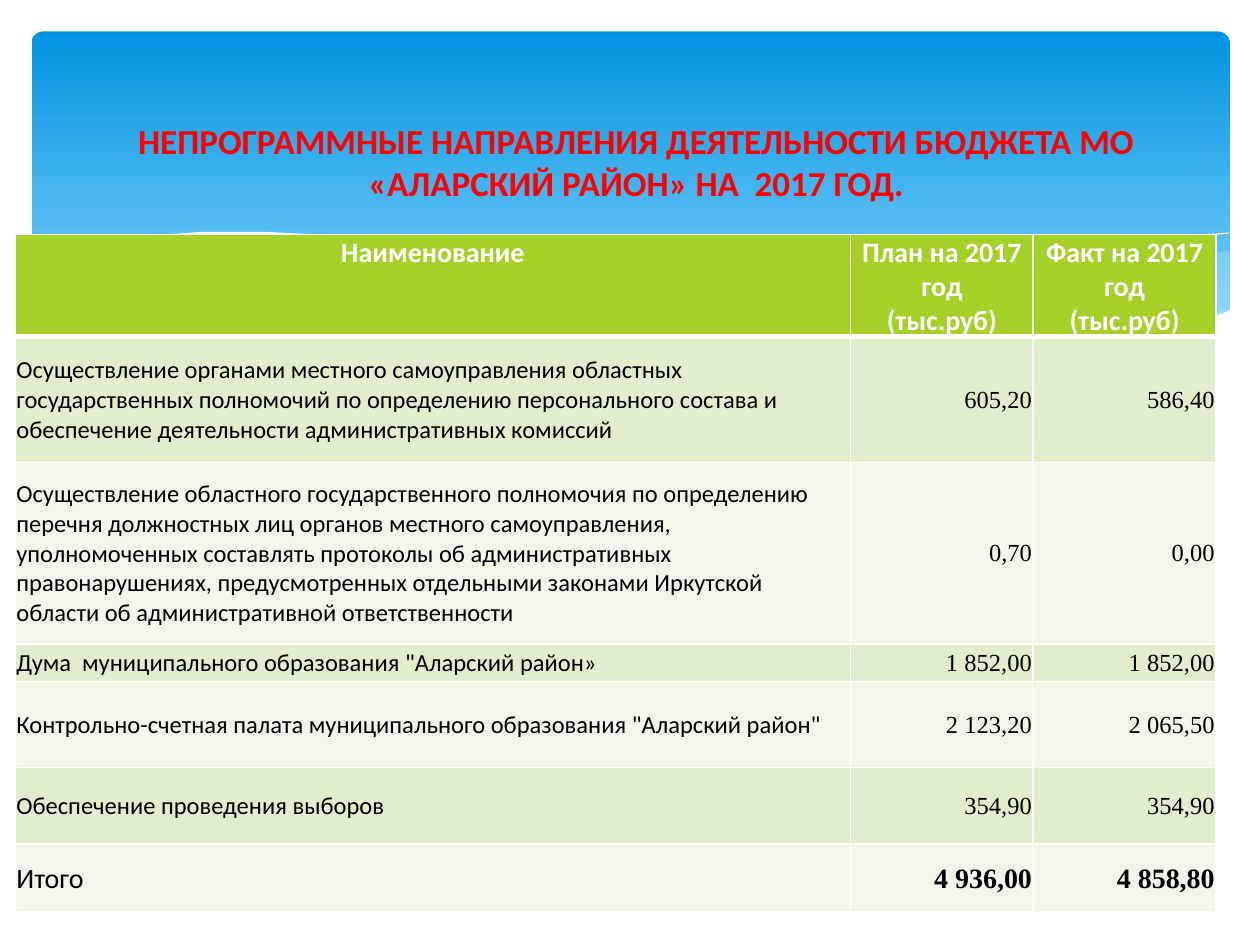
from dataclasses import dataclass
from typing import Optional

from lxml.etree import SubElement
from pptx import Presentation
from pptx.dml.color import RGBColor
from pptx.enum.shapes import MSO_SHAPE
from pptx.enum.text import MSO_ANCHOR, PP_ALIGN
from pptx.oxml.ns import qn
from pptx.util import Inches, Pt

COLORS = {
    "sky_top": "0293E0", "sky_bottom": "83D3FE", "wave": "C6E7FC",
    "white": "FFFFFF", "black": "000000", "title": "FF0000",
    "header": "A5D028", "odd_row": "E1EECD", "even_row": "F0F7E8",
}


@dataclass
class Wave:
    points: list[tuple[float, float]]
    fill: Optional[str] = None
    alpha: int = 100


@dataclass
class BudgetRow:
    name: str
    plan: str
    fact: str
    height: float
    size: int = 14
    bold: bool = False


@dataclass
class TextStyle:
    size: int
    color: str
    font: str = "Calibri"
    bold: bool = False
    align: PP_ALIGN = PP_ALIGN.LEFT


WAVES = [
    Wave([(9.76, 1.99), (9.48, 2.04), (9.21, 2.09), (8.91, 2.16), (8.61, 2.23), (8.05, 2.37),
          (7.53, 2.48), (7.06, 2.57), (6.61, 2.65), (6.91, 2.69), (7.18, 2.72), (7.45, 2.75),
          (7.69, 2.77), (8.03, 2.78), (8.44, 2.77), (8.72, 2.74), (8.97, 2.7), (9.21, 2.65),
          (9.49, 2.57), (9.76, 2.47)], "wave", 29),
    Wave([(8.93, 2.73), (8.66, 2.69), (8.07, 2.6), (7.41, 2.48), (6.68, 2.31), (5.98, 2.14),
          (5.55, 2.05), (5.14, 1.98), (4.65, 1.91), (4.2, 1.87), (3.8, 1.86), (3.44, 1.86),
          (3.13, 1.88), (2.86, 1.91), (3.23, 1.96), (3.62, 2.03), (4.04, 2.11), (4.49, 2.22),
          (5.3, 2.4), (5.84, 2.52), (6.34, 2.61), (6.8, 2.68), (7.22, 2.74), (7.61, 2.77),
          (8.07, 2.78), (8.48, 2.77), (8.76, 2.75)], "wave", 40),
    Wave([(3.09, 1.95), (3.28, 1.92), (3.53, 1.89), (3.87, 1.87), (4.33, 1.87), (4.69, 1.89),
          (5.1, 1.92), (5.56, 1.97), (6.08, 2.04), (6.65, 2.13), (7.27, 2.26), (7.95, 2.41),
          (8.31, 2.51), (9.07, 2.72)]),
    Wave([(6.13, 2.57), (6.52, 2.46), (6.95, 2.35), (7.48, 2.23), (8.06, 2.1), (8.66, 1.99),
          (8.95, 1.94), (9.24, 1.9), (9.51, 1.87), (9.75, 1.85)]),
    Wave([(9.77, 2.46), (9.5, 2.56), (9.2, 2.65), (8.87, 2.71), (8.5, 2.75), (8.09, 2.77),
          (7.61, 2.75), (7.08, 2.7), (6.47, 2.62), (5.79, 2.5), (5.03, 2.33), (4.47, 2.2),
          (3.91, 2.07), (3.39, 1.97), (2.92, 1.91), (2.5, 1.86), (2.11, 1.84), (1.61, 1.84),
          (1.32, 1.86), (1.06, 1.89), (0.85, 1.93), (0.67, 1.97), (0.52, 2.01), (0.36, 2.07),
          (0.23, 2.13), (0.23, 3.29), (9.77, 3.29)], "white"),
]

HEADER_HEIGHT = 0.81
COLUMN_WIDTHS = [6.63, 1.45, 1.45]
HEADINGS = [["Наименование"], ["План на 2017 год", "(тыс.руб)"], ["Факт на 2017 год", "(тыс.руб)"]]
BUDGET_ROWS = [
    BudgetRow("Осуществление органами местного самоуправления областных государственных полномочий "
              "по определению персонального состава и обеспечение деятельности административных "
              "комиссий", "605,20", "586,40", 1),
    BudgetRow("Осуществление областного государственного полномочия по определению перечня "
              "должностных лиц органов местного самоуправления, уполномоченных составлять протоколы "
              "об административных правонарушениях, предусмотренных отдельными законами Иркутской "
              "области об административной ответственности", "0,70", "0,00", 1.44),
    BudgetRow('Дума  муниципального образования "Аларский район»', "1 852,00", "1 852,00", 0.3),
    BudgetRow('Контрольно-счетная палата муниципального образования "Аларский район"',
              "2 123,20", "2 065,50", 0.68),
    BudgetRow("Обеспечение проведения выборов", "354,90", "354,90", 0.61),
    BudgetRow("Итого", "4 936,00", "4 858,80", 0.54, 16, True),
]


def rgb(name: str) -> RGBColor:
    return RGBColor.from_string(COLORS[name])


def write(frame, lines: list[str], style: TextStyle) -> None:
    for index, line in enumerate(lines):
        paragraph = frame.add_paragraph() if index else frame.paragraphs[0]
        paragraph.alignment = style.align
        run = paragraph.add_run()
        run.text = line
        run.font.size = Pt(style.size)
        run.font.name = style.font
        run.font.bold = style.bold
        run.font.color.rgb = rgb(style.color)


def draw_sky(slide) -> None:
    sky = slide.shapes.add_shape(MSO_SHAPE.ROUNDED_RECTANGLE, Inches(0.25), Inches(0.25),
                                 Inches(9.51), Inches(2.7))
    sky.adjustments[0] = 0.034
    sky.shadow.inherit = False
    sky.line.fill.background()
    sky.fill.gradient()
    sky.fill.gradient_angle = 270
    stops = [("sky_top", 0), ("sky_bottom", 0.9)]
    for stop, (color, position) in zip(sky.fill.gradient_stops, stops):
        stop.color.rgb = rgb(color)
        stop.position = position


def draw_wave(slide, wave: Wave) -> None:
    start, *rest = [(Inches(x), Inches(y)) for x, y in wave.points]
    builder = slide.shapes.build_freeform(*start)
    builder.add_line_segments(rest, close=wave.fill is not None)
    outline = builder.convert_to_shape()
    outline.shadow.inherit = False
    if wave.fill is None:
        outline.fill.background()
        outline.line.color.rgb = rgb("white")
        outline.line.width = Pt(0)
        return
    outline.line.fill.background()
    outline.fill.solid()
    outline.fill.fore_color.rgb = rgb(wave.fill)
    if wave.alpha < 100:
        color = outline.fill._xPr.find(qn("a:solidFill"))[0]
        SubElement(color, qn("a:alpha"), val=str(wave.alpha * 1000))


def draw_title(slide) -> None:
    title = slide.shapes.add_textbox(Inches(0.55), Inches(0.7), Inches(9), Inches(1.17)).text_frame
    title.word_wrap = True
    title.vertical_anchor = MSO_ANCHOR.MIDDLE
    write(title, ["НЕПРОГРАММНЫЕ НАПРАВЛЕНИЯ ДЕЯТЕЛЬНОСТИ БЮДЖЕТА МО «АЛАРСКИЙ РАЙОН» НА  2017 ГОД."],
          TextStyle(20, "title", bold=True, align=PP_ALIGN.CENTER))


def fill_cell(cell, lines: list[str], style: TextStyle, fill: str, top: int, bottom: int) -> None:
    cell.margin_left = cell.margin_top = cell.margin_right = Inches(0.01)
    cell.margin_bottom = 0
    cell.vertical_anchor = MSO_ANCHOR.MIDDLE
    properties = cell._tc.get_or_add_tcPr()
    for side, width in {"L": 1, "R": 1, "T": top, "B": bottom}.items():
        border = SubElement(properties, qn(f"a:ln{side}"), w=str(Pt(width)))
        SubElement(SubElement(border, qn("a:solidFill")), qn("a:srgbClr"), val=COLORS["white"])
    cell.fill.solid()
    cell.fill.fore_color.rgb = rgb(fill)
    write(cell.text_frame, lines, style)


def draw_budget(slide) -> None:
    heights = [HEADER_HEIGHT] + [row.height for row in BUDGET_ROWS]
    budget = slide.shapes.add_table(len(heights), len(COLUMN_WIDTHS), Inches(0.12), Inches(1.86),
                                    Inches(sum(COLUMN_WIDTHS)), Inches(sum(heights))).table
    for column, width in zip(budget.columns, COLUMN_WIDTHS):
        column.width = Inches(width)
    for table_row, height in zip(budget.rows, heights):
        table_row.height = Inches(height)
    heading_style = TextStyle(16, "white", bold=True, align=PP_ALIGN.CENTER)
    for column, lines in enumerate(HEADINGS):
        fill_cell(budget.cell(0, column), lines, heading_style, "header", 1, 3)
    budget.cell(0, 0).vertical_anchor = MSO_ANCHOR.TOP
    for index, row in enumerate(BUDGET_ROWS, 1):
        fill = "odd_row" if index % 2 else "even_row"
        name_style = TextStyle(row.size, "black")
        amount_style = TextStyle(row.size, "black", "Times New Roman", row.bold, PP_ALIGN.RIGHT)
        for column, text in enumerate([row.name, row.plan, row.fact]):
            fill_cell(budget.cell(index, column), [text], amount_style if column else name_style,
                      fill, 3 if index == 1 else 1, 1)


def main() -> None:
    """Build the slide on non-programme budget spending for 2017."""
    deck = Presentation()
    deck.slide_width, deck.slide_height = Inches(10), Inches(7.5)
    slide = deck.slides.add_slide(deck.slide_layouts[6])
    draw_sky(slide)
    for wave in WAVES:
        draw_wave(slide, wave)
    draw_title(slide)
    draw_budget(slide)
    deck.save("out.pptx")


if __name__ == "__main__":
    main()
